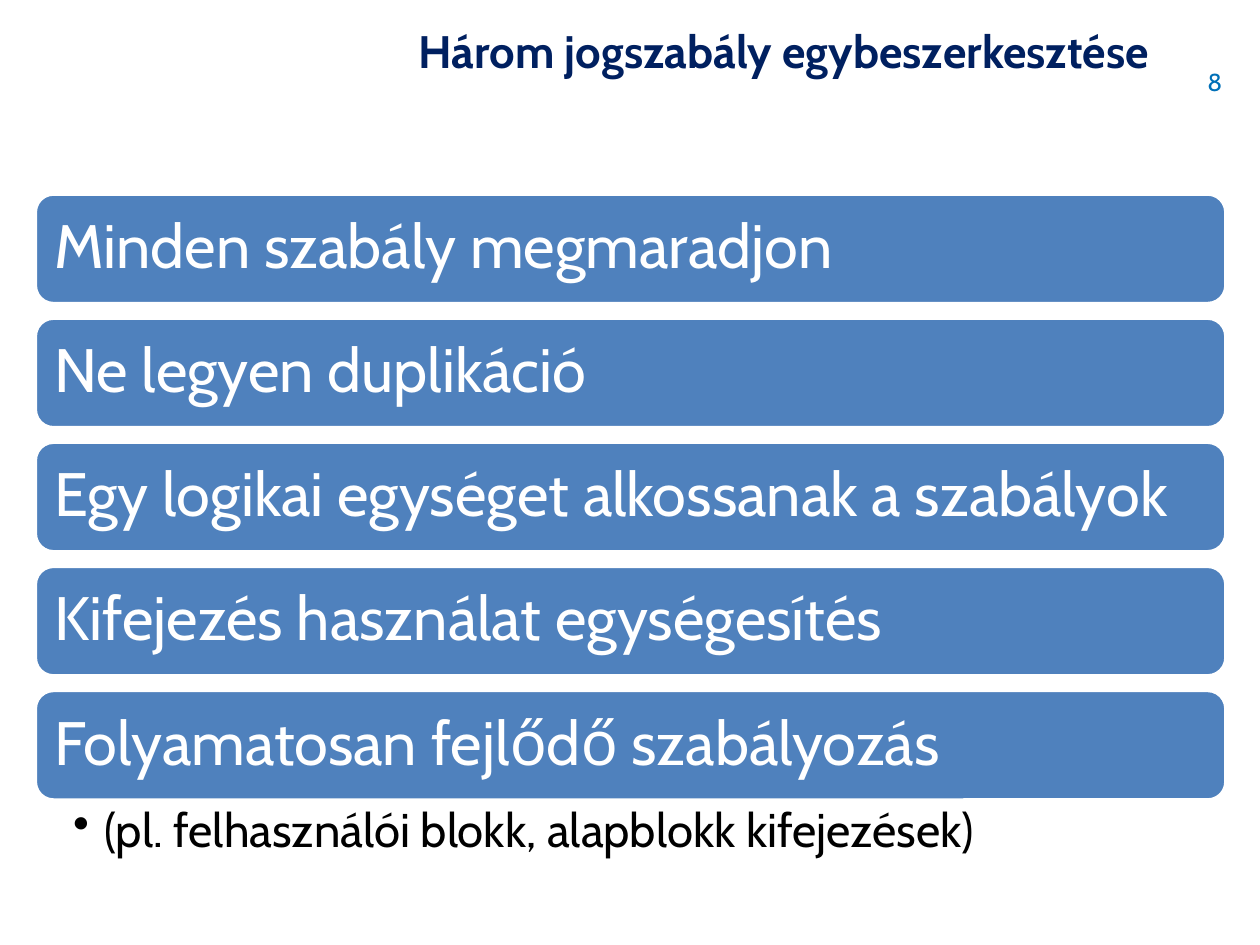
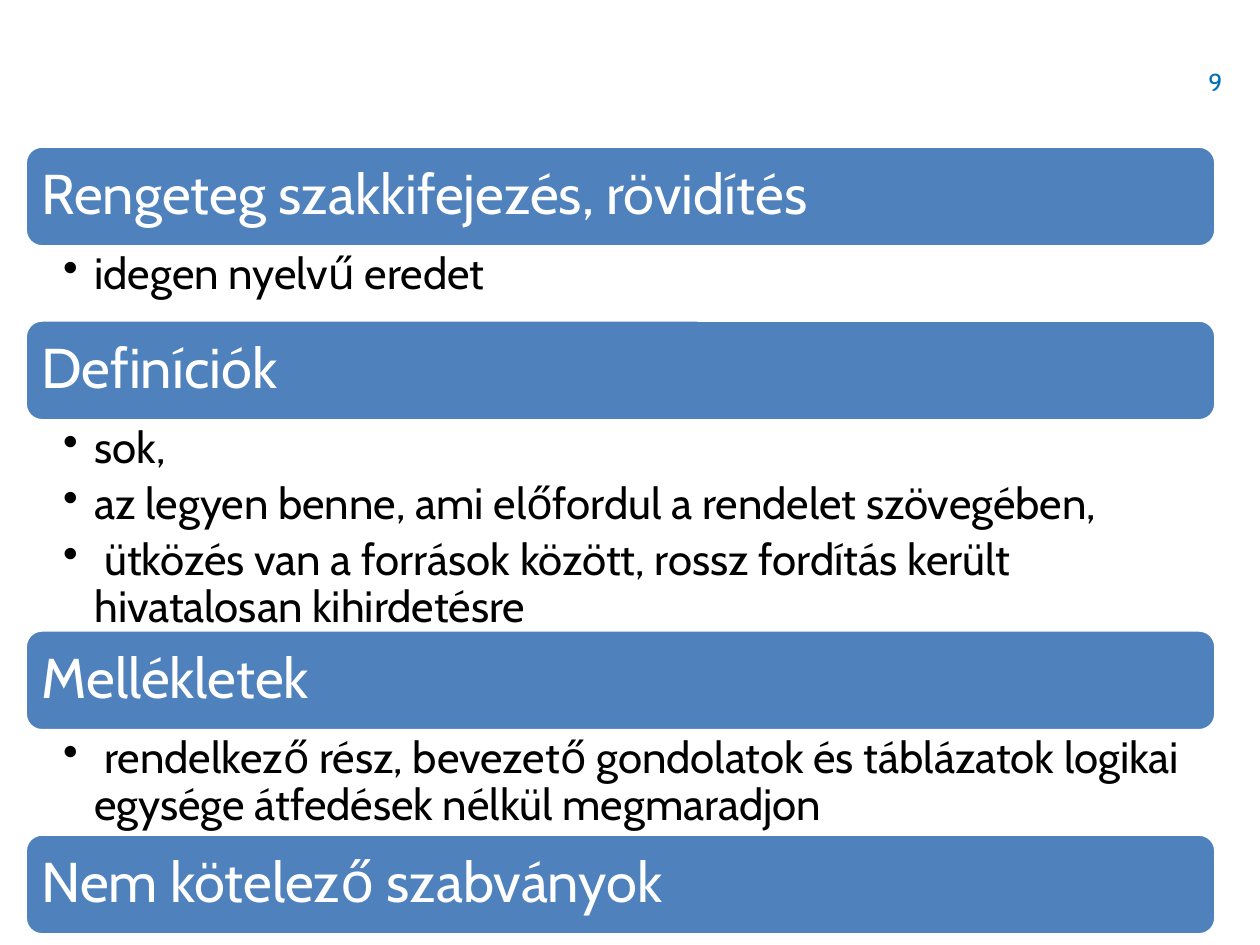
"""Build two slides of heading bars with bulleted details."""
from dataclasses import dataclass

from lxml import etree
from pptx import Presentation
from pptx.dml.color import RGBColor
from pptx.enum.shapes import MSO_SHAPE as Shape
from pptx.enum.text import MSO_ANCHOR as Anchor, PP_ALIGN as Align
from pptx.oxml.ns import qn
from pptx.util import Inches, Pt

FONT = "Cabin"
WHITE = RGBColor(0xFF, 0xFF, 0xFF)
BLACK = RGBColor(0, 0, 0)
BAR_BLUE = RGBColor(0x4F, 0x81, 0xBD)
TITLE_NAVY = RGBColor(0x00, 0x20, 0x60)
NUMBER_BLUE = RGBColor(0x00, 0x70, 0xB8)
BAR_WIDTH = 9.45


@dataclass
class ListStyle:
    """Measures of one list of bars, in inches and points."""
    left: float
    top: float
    bar_height: float
    bar_inset: float
    bar_size: int
    bullet_inset: float
    bullet_size: int


RULES_STYLE = ListStyle(0.28, 1.54, 0.87, 0.11, 35, 0.05, 27)
TERMS_STYLE = ListStyle(0.2, 1.16, 0.8, 0.09, 32, 0.04, 25)

RULES = [
    ("Minden szabály megmaradjon", [], 0.115),
    ("Ne legyen duplikáció", [], 0.115),
    ("Egy logikai egységet alkossanak a szabályok", [], 0.115),
    ("Kifejezés használat egységesítés", [], 0.115),
    ("Folyamatosan fejlődő szabályozás",
     ["(pl. felhasználói blokk, alapblokk kifejezések)"], 0.63),
]
TERMS = [
    ("Rengeteg szakkifejezés, rövidítés", ["idegen nyelvű eredet"], 0.58),
    ("Definíciók",
     ["sok,",
      "az legyen benne, ami előfordul a rendelet szövegében,",
      " ütközés van a források között, rossz fordítás került "
      "hivatalosan kihirdetésre"], 1.66),
    ("Mellékletek",
     [" rendelkező rész, bevezető gondolatok és táblázatok "
      "logikai egysége átfedések nélkül megmaradjon"], 0.82),
    ("Nem kötelező szabványok", [], 0),
]


def set_insets(frame, left, top, right, bottom):
    """Wrap the text and set its margins in inches."""
    frame.word_wrap = True
    frame.margin_left, frame.margin_top = Inches(left), Inches(top)
    frame.margin_right, frame.margin_bottom = Inches(right), Inches(bottom)


def format_text(para, size, color, bold=False, align=Align.LEFT):
    """Format every run of a paragraph."""
    para.alignment = align
    for span in para.runs:
        span.font.name = FONT
        span.font.size = Pt(size)
        span.font.bold = bold
        span.font.color.rgb = color


def add_label(page, text, area, size, color, bold=False, align=Align.LEFT):
    """Add a one-paragraph text box."""
    box = page.shapes.add_textbox(*map(Inches, area))
    box.text_frame.word_wrap = True
    box.text_frame.text = text
    format_text(box.text_frame.paragraphs[0], size, color, bold, align)


def add_bar(page, text, top, style):
    """Add a rounded bar holding a heading."""
    bar = page.shapes.add_shape(
        Shape.ROUNDED_RECTANGLE, Inches(style.left), Inches(top),
        Inches(BAR_WIDTH), Inches(style.bar_height))
    bar.shadow.inherit = False
    bar.fill.solid()
    bar.fill.fore_color.rgb = BAR_BLUE
    bar.line.color.rgb = WHITE
    bar.line.width = Pt(2)
    frame = bar.text_frame
    set_insets(frame, *[style.bar_inset] * 4)
    frame.vertical_anchor = Anchor.MIDDLE
    frame.text = text
    frame.paragraphs[0].line_spacing = 0.9
    format_text(frame.paragraphs[0], style.bar_size, WHITE)


def add_bullet(para):
    """Give a paragraph a hanging round bullet."""
    properties = para._p.get_or_add_pPr()
    properties.set("marL", str(Inches(0.25)))
    properties.set("indent", str(-Inches(0.25)))
    etree.SubElement(properties, qn("a:buChar"), char="•")


def add_bullets(page, items, top, height, style):
    """Add the bulleted details below a bar."""
    box = page.shapes.add_textbox(
        Inches(style.left), Inches(top), Inches(BAR_WIDTH), Inches(height))
    frame = box.text_frame
    set_insets(frame, 0.3, style.bullet_inset, 0.26, style.bullet_inset)
    frame.text = "\n".join(items)
    for para in frame.paragraphs:
        add_bullet(para)
        para.line_spacing = 0.9
        para.space_after = Pt(style.bullet_size * 0.2)
        format_text(para, style.bullet_size, BLACK)


def add_sections(page, sections, style):
    """Stack bars and their details from the top down."""
    top = style.top
    for heading, items, space_below in sections:
        add_bar(page, heading, top, style)
        top += style.bar_height
        if items:
            add_bullets(page, items, top, space_below, style)
        top += space_below


def add_page(deck, number):
    """Add a blank page with its number."""
    page = deck.slides.add_slide(deck.slide_layouts[6])
    add_label(page, str(number), (8.07, 0.48, 1.73, 0.34), 14, NUMBER_BLUE,
              align=Align.RIGHT)
    return page


def main():
    """Build and save the deck."""
    deck = Presentation()
    deck.slide_width, deck.slide_height = Inches(10), Inches(7.5)

    rules_page = add_page(deck, 8)
    add_sections(rules_page, RULES, RULES_STYLE)
    add_label(rules_page, "Három jogszabály egybeszerkesztése",
              (2.72, 0.13, 7.01, 1.02), 26, TITLE_NAVY, True, Align.CENTER)

    terms_page = add_page(deck, 9)
    add_sections(terms_page, TERMS, TERMS_STYLE)

    deck.save("out.pptx")


if __name__ == "__main__":
    main()
